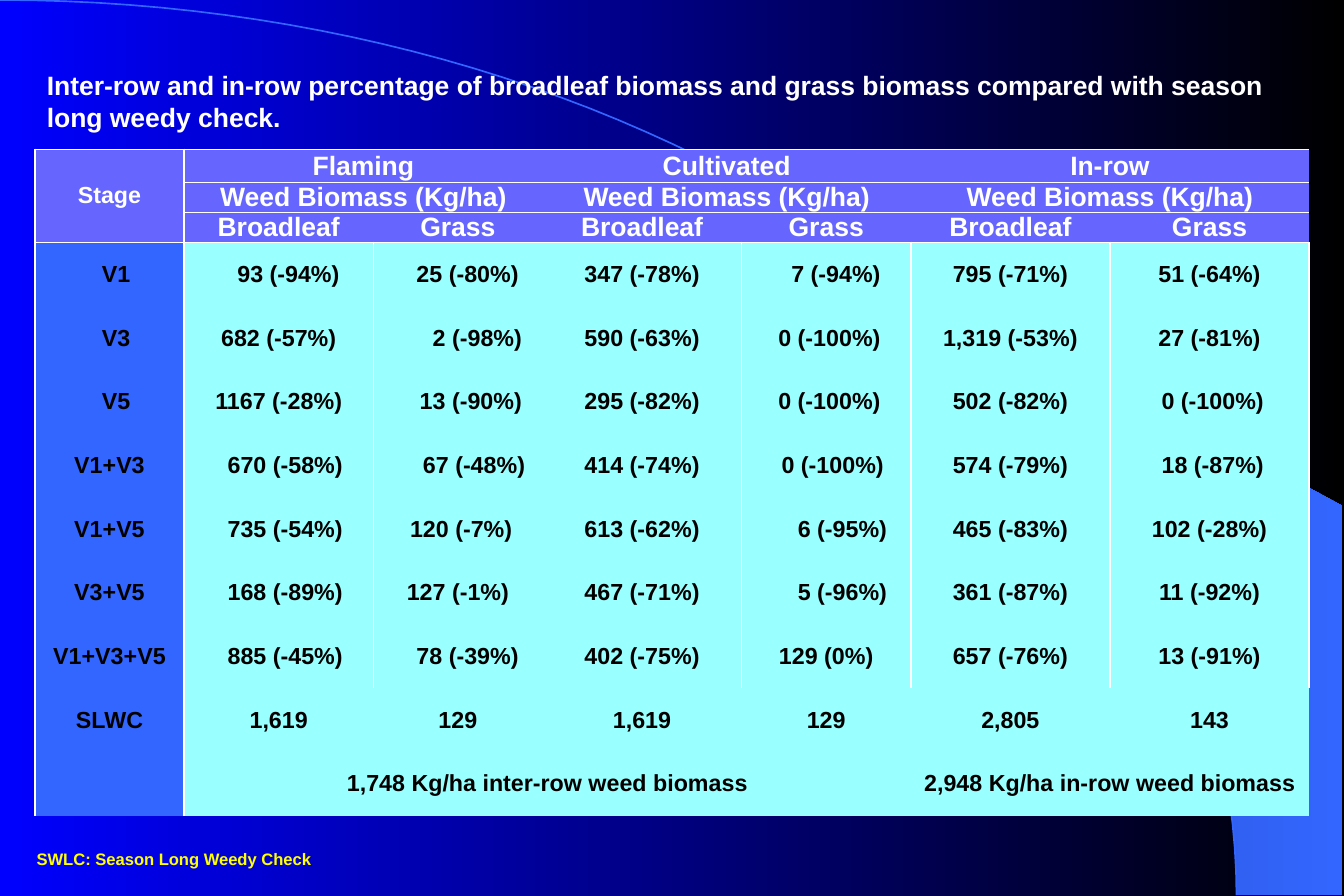
from dataclasses import dataclass
from math import asin, cos, pi, sin

from lxml.etree import SubElement
from pptx import Presentation
from pptx.dml.color import RGBColor
from pptx.dml.fill import FillFormat
from pptx.enum.text import MSO_ANCHOR as Anchor, MSO_AUTO_SIZE as AutoSize, PP_ALIGN as Align
from pptx.oxml.ns import qn
from pptx.shapes.autoshape import Shape
from pptx.slide import Slide
from pptx.table import Table, _Cell as Cell
from pptx.text.text import TextFrame
from pptx.util import Emu, Inches, Pt

GRID_UNIT = Inches(1 / 12)
SLIDE_COLUMNS, SLIDE_ROWS = 135, 90
ARC_COLUMNS, ARC_ROWS = 124.2, 89.9
WEDGE_START, WEDGE_RIGHT, WEDGE_TOP = 79.6, 134.8, 50.8
ARC_STEPS = 60
TABLE_COLUMNS = (15, 19, 17, 20, 17, 20, 20)
HEADER_ROWS = (3.35, 3, 3)
BODY_ROW = 6.4
CELL_MARGIN = 0.85
SPACE_WIDTH = 0.65
NO_STYLE = "{2D5ABB26-0587-4C30-8999-92F81FD0307C}"

Point = tuple[int, int]


@dataclass(frozen=True)
class Theme:
    font: str = "Arial"
    white: str = "FFFFFF"
    black: str = "000000"
    yellow: str = "FFFF00"
    background: str = "0000FF"
    accent: str = "3366FF"
    wedge_dark: str = "2449B6"
    header: str = "6666FF"
    body: str = "99FFFF"
    heading_size: int = 16
    table_size: int = 14
    note_size: int = 10
    line_width: int = 1


@dataclass(frozen=True)
class Area:
    left: float
    top: float
    width: float
    height: float

    def lengths(self) -> tuple[Emu, Emu, Emu, Emu]:
        return units(self.left), units(self.top), units(self.width), units(self.height)


@dataclass(frozen=True)
class StageRow:
    stage: str
    values: tuple[str, ...]
    indents: tuple[int, ...] = (0,) * 7
    measured: bool = True


THEME = Theme()
TITLE_AREA = Area(3.5, 3, 128, 10.9)
NOTE_AREA = Area(2.5, 84, 123, 4)
TITLE = ("Inter-row and in-row percentage of broadleaf biomass and grass biomass "
         "compared with season long weedy check.")
NOTE = "SWLC: Season Long Weedy Check"
TREATMENTS = ("Flaming", "Cultivated", "In-row")
MEASURE = "Weed Biomass (Kg/ha)"
WEEDS = ("Broadleaf", "Grass")
STAGES = (
    StageRow("V1", ("93 (-94%)", "25 (-80%)", "347 (-78%)", "7 (-94%)", "795 (-71%)", "51 (-64%)"),
             (2, 3, 3, 0, 3, 0, 0)),
    StageRow("V3", ("682 (-57%)", "2 (-98%)", "590 (-63%)", "0 (-100%)", "1,319 (-53%)", "27 (-81%)"),
             (2, 0, 6, 0, 1, 0, 0)),
    StageRow("V5", ("1167 (-28%)", "13 (-90%)", "295 (-82%)", "0 (-100%)", "502 (-82%)", "0 (-100%)"),
             (2, 0, 4, 0, 1, 0, 1)),
    StageRow("V1+V3", ("670 (-58%)", "67 (-48%)", "414 (-74%)", "0 (-100%)", "574 (-79%)", "18 (-87%)"),
             (0, 2, 5, 0, 2, 0, 1)),
    StageRow("V1+V5", ("735 (-54%)", "120 (-7%)", "613 (-62%)", "6 (-95%)", "465 (-83%)", "102 (-28%)"),
             (0, 2, 1, 0, 5, 0, 0)),
    StageRow("V3+V5", ("168 (-89%)", "127 (-1%)", "467 (-71%)", "5 (-96%)", "361 (-87%)", "11 (-92%)"),
             (0, 2, 0, 0, 5, 0, 0)),
    StageRow("V1+V3+V5", ("885 (-45%)", "78 (-39%)", "402 (-75%)", "129 (0%)", "657 (-76%)", "13 (-91%)"),
             (0, 2, 3, 0, 0, 0, 0)),
    StageRow("SLWC", ("1,619", "129", "1,619", "129", "2,805", "143"), measured=False),
    StageRow("", ("1,748 Kg/ha inter-row weed biomass", "", "", "", "2,948 Kg/ha in-row weed biomass", ""),
             measured=False),
)


def units(count: float) -> Emu:
    return Emu(round(count * GRID_UNIT))


def color(value: str) -> RGBColor:
    return RGBColor.from_string(value)


def fill_gradient(fill: FillFormat, start: str, end: str) -> None:
    fill.gradient()
    fill.gradient_angle = 0
    for stop, value, position in zip(fill.gradient_stops, (start, end), (0, 1)):
        stop.color.rgb = color(value)
        stop.position = position


def write(frame: TextFrame, text: str, size: int, value: str, align: Align) -> None:
    frame.text = text
    paragraph = frame.paragraphs[0]
    paragraph.alignment = align
    font = paragraph.font
    font.name, font.size, font.bold = THEME.font, Pt(size), True
    font.color.rgb = color(value)


def arc_points(start_column: float) -> list[Point]:
    first = asin(start_column / ARC_COLUMNS)
    angles = (first + (pi / 2 - first) * step / ARC_STEPS for step in range(ARC_STEPS + 1))
    return [(units(ARC_COLUMNS * sin(angle)), units(ARC_ROWS * (1 - cos(angle)))) for angle in angles]


def add_outline(slide: Slide, points: list[Point], close: bool) -> Shape:
    builder = slide.shapes.build_freeform(*points[0])
    builder.add_line_segments(points[1:], close=close)
    shape = builder.convert_to_shape()
    shape.shadow.inherit = False
    return shape


def add_decoration(slide: Slide) -> None:
    fill_gradient(slide.background.fill, THEME.background, THEME.black)
    corners = [(units(WEDGE_RIGHT), units(row)) for row in (ARC_ROWS, WEDGE_TOP)]
    wedge = add_outline(slide, arc_points(WEDGE_START) + corners, True)
    fill_gradient(wedge.fill, THEME.wedge_dark, THEME.accent)
    wedge.line.fill.background()
    arc = add_outline(slide, arc_points(0), False)
    arc.fill.background()
    arc.line.color.rgb = color(THEME.accent)
    arc.line.width = Pt(THEME.line_width)


def place_title(slide: Slide) -> None:
    title = slide.shapes.title
    title.left, title.top, title.width, title.height = TITLE_AREA.lengths()
    frame = title.text_frame
    frame.auto_size, frame.vertical_anchor = AutoSize.NONE, Anchor.BOTTOM
    write(frame, TITLE, THEME.heading_size, THEME.white, Align.LEFT)
    title.element.getparent().append(title.element)


def cell_edges(row: int, column: int) -> str:
    body = row - len(HEADER_ROWS)
    if column == 0:
        return "LRT" if row == 0 or body == 0 else "LR"
    if body < 0:
        return "LTB" if column == 1 else "TB"
    if not STAGES[body].measured:
        return "L" if column == 1 else ""
    sides = ("L" if column != 3 else "") + ("R" if column != 2 else "")
    return sides + ("T" if body == 0 else "")


def draw_borders(cell: Cell, edges: str) -> None:
    properties = cell._tc.get_or_add_tcPr()
    for edge in "LRTB":
        drawn = edge in edges
        line = SubElement(properties, qn(f"a:ln{edge}"), w=str(Pt(THEME.line_width) if drawn else 0))
        fill = SubElement(line, qn("a:solidFill" if drawn else "a:noFill"))
        if drawn:
            SubElement(fill, qn("a:srgbClr"), val=THEME.white)


def fill_cell(table: Table, row: int, column: int, text: str, indent: int) -> None:
    cell = table.cell(row, column)
    header = row < len(HEADER_ROWS)
    draw_borders(cell, cell_edges(row, column))
    cell.fill.solid()
    cell.fill.fore_color.rgb = color(THEME.header if header else THEME.body if column else THEME.accent)
    cell.vertical_anchor = Anchor.MIDDLE
    cell.margin_left, cell.margin_right = units(CELL_MARGIN + indent * SPACE_WIDTH), units(CELL_MARGIN)
    cell.margin_top = cell.margin_bottom = 0
    size = THEME.heading_size if header and column else THEME.table_size
    write(cell.text_frame, text, size, THEME.white if header else THEME.black, Align.CENTER)


def add_biomass_table(slide: Slide) -> None:
    heights = HEADER_ROWS + (BODY_ROW,) * len(STAGES)
    area = Area(3.5, 15, sum(TABLE_COLUMNS), sum(heights))
    table = slide.shapes.add_table(len(heights), len(TABLE_COLUMNS), *area.lengths()).table
    table.first_row = table.horz_banding = False
    table._tbl.tblPr.find(qn("a:tableStyleId")).text = NO_STYLE
    for column, width in zip(table.columns, TABLE_COLUMNS):
        column.width = units(width)
    for row, height in zip(table.rows, heights):
        row.height = units(height)
    headers = (
        StageRow("Stage", tuple(text for name in TREATMENTS for text in (name, ""))),
        StageRow("", (MEASURE, "") * len(TREATMENTS)),
        StageRow("", WEEDS * len(TREATMENTS)),
    )
    for row, record in enumerate(headers + STAGES):
        for column, (text, indent) in enumerate(zip((record.stage,) + record.values, record.indents)):
            fill_cell(table, row, column, text, indent)
    last = len(heights) - 1
    pairs = [(row, column, row, column + 1) for row in (0, 1) for column in (1, 3, 5)]
    for top, left, bottom, right in [(0, 0, 2, 0), *pairs, (last, 1, last, 4), (last, 5, last, 6)]:
        table.cell(top, left).merge(table.cell(bottom, right))


def add_note(slide: Slide) -> None:
    frame = slide.shapes.add_textbox(*NOTE_AREA.lengths()).text_frame
    frame.word_wrap = True
    write(frame, NOTE, THEME.note_size, THEME.yellow, Align.LEFT)
    frame.paragraphs[0].line_spacing = Pt(16)


def main() -> None:
    presentation = Presentation()
    presentation.slide_width, presentation.slide_height = units(SLIDE_COLUMNS), units(SLIDE_ROWS)
    slide = presentation.slides.add_slide(presentation.slide_layouts[5])
    add_decoration(slide)
    place_title(slide)
    add_biomass_table(slide)
    add_note(slide)
    presentation.save("out.pptx")


if __name__ == "__main__":
    main()
